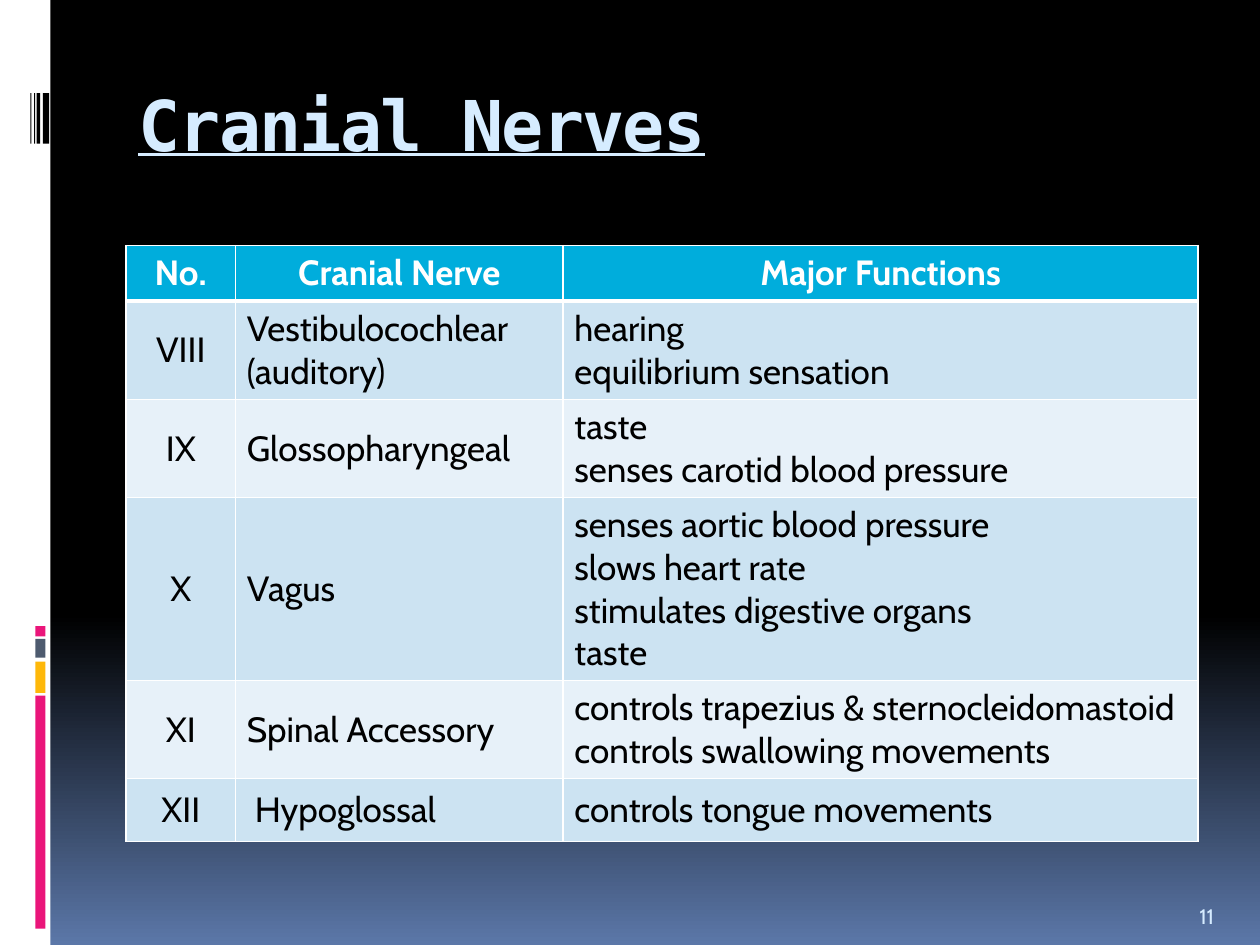
from copy import deepcopy
from dataclasses import dataclass

from pptx import Presentation
from pptx.dml.color import RGBColor
from pptx.enum.shapes import MSO_SHAPE
from pptx.enum.text import MSO_ANCHOR, PP_ALIGN
from pptx.oxml.ns import qn
from pptx.oxml.xmlchemy import OxmlElement
from pptx.util import Inches, Pt

RECTANGLE = MSO_SHAPE.RECTANGLE
TOP, MIDDLE, BOTTOM = MSO_ANCHOR.TOP, MSO_ANCHOR.MIDDLE, MSO_ANCHOR.BOTTOM
LEFT, CENTER = PP_ALIGN.LEFT, PP_ALIGN.CENTER

# The slide is a grid of 100 columns by 75 rows of square units.
COLUMNS, ROWS = 100, 75


@dataclass(frozen=True)
class Theme:
    white: str = "FFFFFF"
    black: str = "000000"
    dusk: str = "5B77A8"
    pale: str = "D6ECFF"
    pink: str = "EA157A"
    amber: str = "FEB80A"
    slate: str = "4E5B6F"
    header: str = "00ADDC"
    bands: tuple = ("CCE3F2", "E7F1F9")
    title_font: str = "DejaVu Sans Mono"
    body_font: str = "Cabin"
    title_size: int = 40
    table_size: int = 20
    number_size: int = 12
    thin: int = 1
    thick: int = 3


THEME = Theme()

SIDE_MARKS = [  # top, height, colour
    (55.2, 18.5, THEME.pink),
    (52.5, 2.5, THEME.amber),
    (50.7, 1.5, THEME.slate),
    (49.7, 0.8, THEME.pink),
]
BARCODE = [(3.4, 0.5), (2.9, 0.3), (2.7, 0.1), (2.4, 0.1)]  # left, width

NERVE_COLUMNS = [8.7, 26, 50.4]
NERVE_ROWS = [4.4, 7.8, 7.8, 14.5, 7.8, 5]
NERVES = [
    ("No.", "Cranial Nerve", "Major Functions"),
    ("VIII", "Vestibulocochlear\n(auditory)", "hearing\nequilibrium sensation"),
    ("IX", "Glossopharyngeal", "taste\nsenses carotid blood pressure"),
    ("X", "Vagus",
     "senses aortic blood pressure\nslows heart rate\n"
     "stimulates digestive organs\ntaste"),
    ("XI", "Spinal Accessory",
     "controls trapezius & sternocleidomastoid\ncontrols swallowing movements"),
    ("XII", " Hypoglossal", "controls tongue movements"),
]


def units(count):
    return Inches(count / 10)


def colour(code):
    return RGBColor.from_string(code)


def paint_background(slide):
    fill = slide.background.fill
    fill.gradient()
    fill.gradient_angle = 270
    stop_list = slide.element.find(".//" + qn("a:gsLst"))
    stop_list.append(deepcopy(stop_list[-1]))
    shades = [(0, THEME.black), (0.65, THEME.black), (1, THEME.dusk)]
    for stop, (position, code) in zip(fill.gradient_stops, shades):
        stop.position = position
        stop.color.rgb = colour(code)


def add_bar(slide, left, top, width, height, code):
    bar = slide.shapes.add_shape(
        RECTANGLE, units(left), units(top), units(width), units(height))
    bar.shadow.inherit = False
    bar.fill.solid()
    bar.fill.fore_color.rgb = colour(code)
    bar.line.fill.background()


def write(para, text, font, size, code, bold=False):
    para.text = text
    for span in para.runs:
        span.font.name = font
        span.font.size = Pt(size)
        span.font.bold = bold
        span.font.color.rgb = colour(code)


def add_text_box(slide, left, top, width, height, anchor):
    """Add an empty wrapping box and return its text frame."""
    box = slide.shapes.add_textbox(
        units(left), units(top), units(width), units(height))
    frame = box.text_frame
    frame.word_wrap = True
    frame.vertical_anchor = anchor
    return frame


def add_title(slide, text):
    frame = add_text_box(slide, 10, 5.6, 85, 10, TOP)
    frame.margin_top = units(0.9)
    para = frame.paragraphs[0]
    write(para, text, THEME.title_font, THEME.title_size, THEME.pale, bold=True)
    for span in para.runs:
        span.font.underline = True
        span.font._element.set("spc", "-100")


def add_page_number(slide, text):
    frame = add_text_box(slide, 94.2, 70.2, 5, 4, BOTTOM)
    write(frame.paragraphs[0], text, THEME.body_font, THEME.number_size, THEME.pale)


def set_borders(cell, top, bottom):
    """Draw white borders; top and bottom are widths in points."""
    widths = {"lnL": THEME.thin, "lnR": THEME.thin, "lnT": top, "lnB": bottom}
    properties = cell._tc.get_or_add_tcPr()
    for place, (tag, width) in enumerate(widths.items()):
        line = OxmlElement("a:" + tag)
        line.set("w", str(Pt(width)))
        fill = OxmlElement("a:solidFill")
        shade = OxmlElement("a:srgbClr")
        shade.set("val", THEME.white)
        fill.append(shade)
        line.append(fill)
        properties.insert(place, line)


def fill_cell(cell, text, row, column):
    is_header = row == 0
    cell.vertical_anchor = MIDDLE
    cell.margin_left = cell.margin_right = units(0.9)
    cell.margin_top = cell.margin_bottom = units(0.5)
    cell.fill.solid()
    cell.fill.fore_color.rgb = colour(
        THEME.header if is_header else THEME.bands[(row - 1) % 2])
    para = cell.text_frame.paragraphs[0]
    write(para, text, THEME.body_font, THEME.table_size,
          THEME.white if is_header else THEME.black, bold=is_header)
    para.alignment = CENTER if is_header or column == 0 else LEFT
    set_borders(cell,
                top=THEME.thick if row == 1 else THEME.thin,
                bottom=THEME.thick if is_header else THEME.thin)


def add_nerve_table(slide):
    table = slide.shapes.add_table(
        len(NERVES), len(NERVE_COLUMNS), units(10), units(19.5),
        units(sum(NERVE_COLUMNS)), units(sum(NERVE_ROWS))).table
    for column, width in zip(table.columns, NERVE_COLUMNS):
        column.width = units(width)
    for row, height in zip(table.rows, NERVE_ROWS):
        row.height = units(height)
    for row, texts in enumerate(NERVES):
        for column, text in enumerate(texts):
            fill_cell(table.cell(row, column), text, row, column)


def main():
    deck = Presentation()
    deck.slide_width, deck.slide_height = units(COLUMNS), units(ROWS)
    page = deck.slides.add_slide(deck.slide_layouts[6])
    paint_background(page)
    add_bar(page, 0, 0, 4, ROWS, THEME.white)
    for top, height, code in SIDE_MARKS:
        add_bar(page, 2.8, top, 0.8, height, code)
    for left, width in BARCODE:
        add_bar(page, left, 7.4, width, 4, THEME.black)
    add_title(page, "Cranial Nerves")
    add_nerve_table(page)
    add_page_number(page, "11")
    deck.save("out.pptx")


if __name__ == "__main__":
    main()
